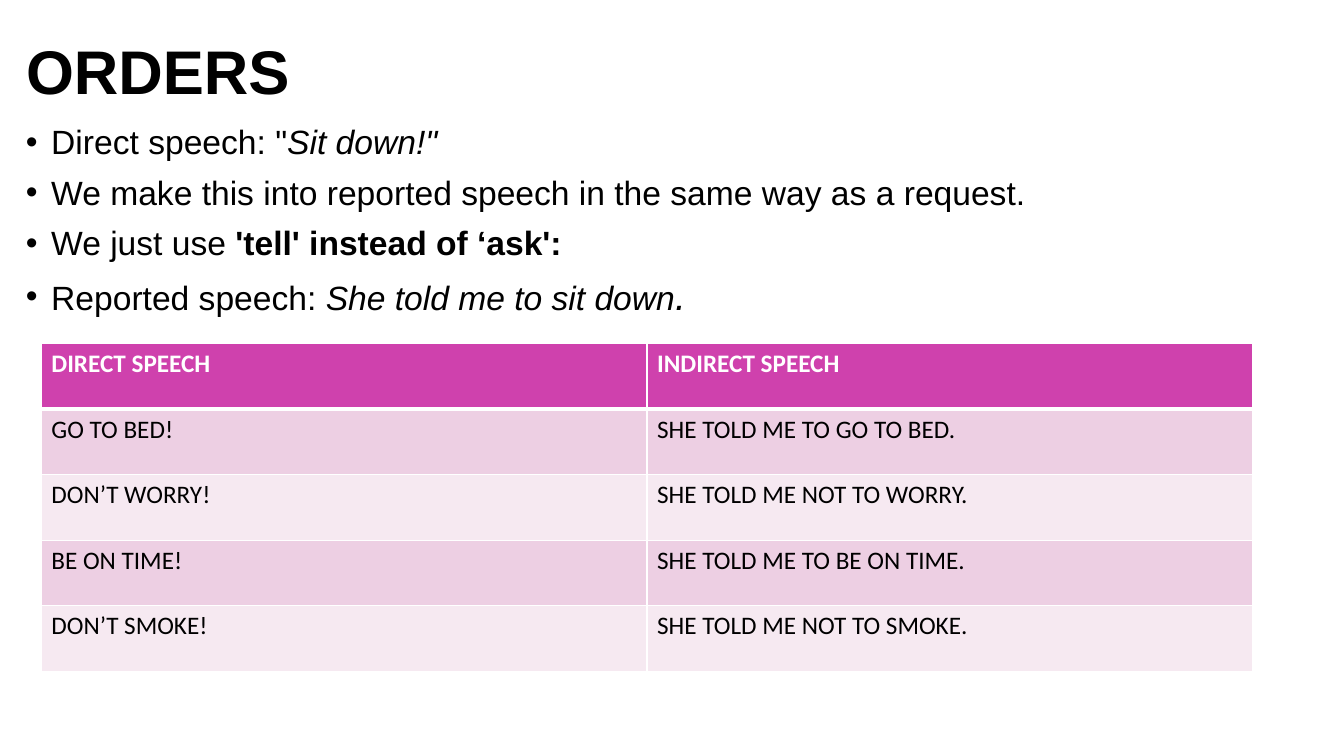
import pptx
import pptx.util
import pptx.dml.color
import pptx.enum.text
import pptx.oxml.ns
from lxml import etree

Pt = pptx.util.Pt
BLACK, WHITE, MAGENTA = "000000", "FFFFFF", "CF41AD"
BANDS = ["EDCFE3", "F6E9F1"]
PLAIN, ITALIC, BOLD = (24, False, False), (24, False, True), (24, True, False)

POINTS = [
    [('Direct speech: "', PLAIN), ('Sit down!"', ITALIC)],
    [("We make this into reported speech in the same way as a request.", PLAIN)],
    [("We just use ", PLAIN), ("'tell' instead of ‘ask':", BOLD)],
    [("Reported speech: ", PLAIN), ("She told me to sit down", ITALIC),
     (".", (28, False, True))],
]

SPEECH_ROWS = [
    ("DIRECT SPEECH", "INDIRECT SPEECH"),
    ("GO TO BED!", "SHE TOLD ME TO GO TO BED."),
    ("DON’T WORRY!", "SHE TOLD ME NOT TO WORRY."),
    ("BE ON TIME!", "SHE TOLD ME TO BE ON TIME."),
    ("DON’T SMOKE!", "SHE TOLD ME NOT TO SMOKE."),
]


def color(value):
    return pptx.dml.color.RGBColor.from_string(value)


def add_xml(parent, tag, **attributes):
    return etree.SubElement(parent, pptx.oxml.ns.qn(tag), attributes)


def style(font, name, size, ink, bold=False, italic=False):
    font.name = name
    font.size = Pt(size)
    font.bold = bold
    font.italic = italic
    font.color.rgb = color(ink)


def add_text_frame(slide, left, top, width, height):
    frame = slide.shapes.add_textbox(Pt(left), Pt(top), Pt(width), Pt(height)).text_frame
    frame.word_wrap = True
    return frame


def add_title(slide, text):
    frame = add_text_frame(slide, 11.5, 20.2, 650, 66.2)
    frame.vertical_anchor = pptx.enum.text.MSO_ANCHOR.MIDDLE
    frame.text = text
    heading = frame.paragraphs[0]
    heading.line_spacing = 0.9
    style(heading.runs[0].font, "Arial", 44, BLACK, bold=True)


def add_bullets(slide, points):
    frame = add_text_frame(slide, 11.5, 86.4, 828, 342.7)
    for index, pieces in enumerate(points):
        point = frame.add_paragraph() if index else frame.paragraphs[0]
        point.line_spacing = 0.9
        point.space_before = Pt(10 if index else 0)
        properties = point._p.get_or_add_pPr()
        properties.set("marL", str(Pt(18)))
        properties.set("indent", str(Pt(-18)))
        add_xml(properties, "a:buFont", typeface="Arial")
        add_xml(properties, "a:buChar", char="•")
        for text, (size, bold, italic) in pieces:
            run = point.add_run()
            run.text = text
            style(run.font, "Arial", size, BLACK, bold, italic)


def add_border(cell, tag, width):
    line = add_xml(cell._tc.get_or_add_tcPr(), tag, w=str(Pt(width)))
    add_xml(add_xml(line, "a:solidFill"), "a:srgbClr", val=WHITE)


def fill_cell(cell, text, row):
    header = row == 0
    add_border(cell, "a:lnL", 1)
    add_border(cell, "a:lnR", 1)
    add_border(cell, "a:lnT", 3 if row == 1 else 1)
    add_border(cell, "a:lnB", 3 if header else 1)
    cell.fill.solid()
    cell.fill.fore_color.rgb = color(MAGENTA if header else BANDS[(row - 1) % 2])
    cell.text = text
    style(cell.text_frame.paragraphs[0].runs[0].font, "Calibri", 18,
          WHITE if header else BLACK, bold=header)


def add_speech_table(slide, rows):
    table = slide.shapes.add_table(
        len(rows), len(rows[0]), Pt(29.5), Pt(245.5), Pt(865.4), Pt(234)).table
    for row, texts in enumerate(rows):
        for column, text in enumerate(texts):
            fill_cell(table.cell(row, column), text, row)


def main():
    presentation = pptx.Presentation()
    presentation.slide_width = Pt(960)
    presentation.slide_height = Pt(540)
    slide = presentation.slides.add_slide(presentation.slide_layouts[6])
    add_title(slide, "ORDERS")
    add_bullets(slide, POINTS)
    add_speech_table(slide, SPEECH_ROWS)
    presentation.save("out.pptx")


if __name__ == "__main__":
    main()
